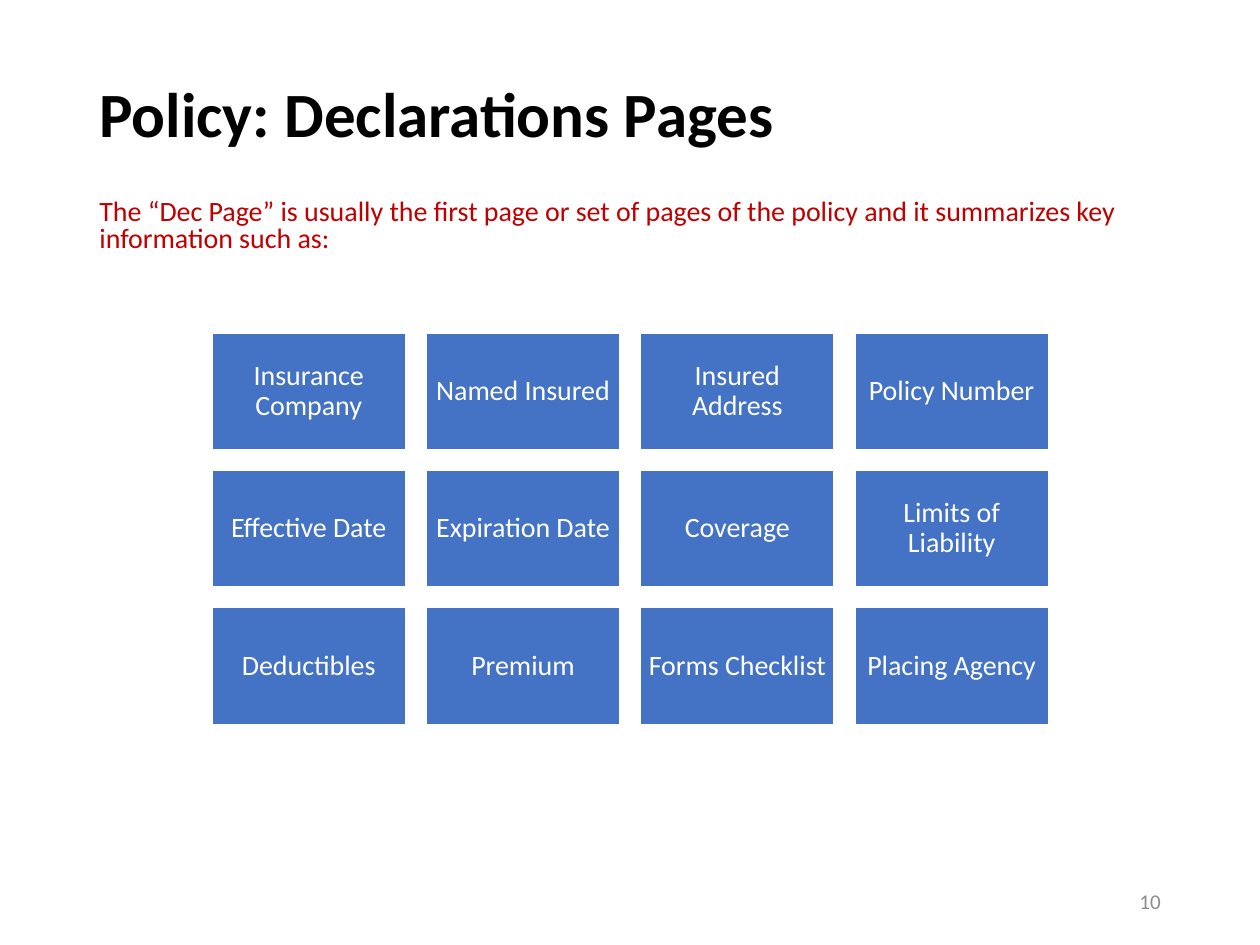
from pptx import Presentation
from pptx.dml.color import RGBColor
from pptx.enum.shapes import MSO_SHAPE
from pptx.enum.text import MSO_ANCHOR, MSO_AUTO_SIZE, PP_ALIGN
from pptx.oxml.ns import qn
from pptx.util import Cm, Pt
from lxml.etree import SubElement

TITLE = "Policy: Declarations Pages"
INTRO = (
    "The “Dec Page” is usually the first page or set of pages of the policy "
    "and it summarizes key information such as:"
)
PAGE_NUMBER = "10"
DECLARATIONS = [
    ["Insurance Company", "Named Insured", "Insured Address", "Policy Number"],
    ["Effective Date", "Expiration Date", "Coverage", "Limits of Liability"],
    ["Deductibles", "Premium", "Forms Checklist", "Placing Agency"],
]
COLOURS = {
    "title": "000000",
    "intro": "C00000",
    "number": "8C8C8C",
    "card": "4472C4",
    "white": "FFFFFF",
}
GRID_LEFT, GRID_TOP = 4.27, 6.71
CARD_WIDTH, CARD_HEIGHT, GAP = 3.91, 2.36, 0.41
CARD_INSET = Cm(0.15)


def colour(name):
    return RGBColor.from_string(COLOURS[name])


def place(part, left, top, width, height):
    part.left, part.top = Cm(left), Cm(top)
    part.width, part.height = Cm(width), Cm(height)


def write(part, text, size, colour_name, align, anchor, spacing=1.0, bold=False):
    frame = part.text_frame
    frame.text = text
    frame.word_wrap = True
    frame.auto_size = MSO_AUTO_SIZE.NONE
    frame.vertical_anchor = anchor
    paragraph = frame.paragraphs[0]
    paragraph.alignment = align
    paragraph.line_spacing = spacing
    paragraph.space_before = Pt(0)
    font = paragraph.runs[0].font
    font.name, font.size, font.bold = "Calibri", Pt(size), bold
    font.color.rgb = colour(colour_name)
    return paragraph


def add_card(slide, label, row, column):
    card = slide.shapes.add_shape(
        MSO_SHAPE.RECTANGLE,
        Cm(GRID_LEFT + column * (CARD_WIDTH + GAP)),
        Cm(GRID_TOP + row * (CARD_HEIGHT + GAP)),
        Cm(CARD_WIDTH),
        Cm(CARD_HEIGHT),
    )
    card.shadow.inherit = False
    card.fill.solid()
    card.fill.fore_color.rgb = colour("card")
    card.line.color.rgb = colour("white")
    card.line.width = Pt(1)
    frame = card.text_frame
    frame.margin_left = frame.margin_right = CARD_INSET
    frame.margin_top = frame.margin_bottom = CARD_INSET
    write(card, label, 16, "white", PP_ALIGN.CENTER, MSO_ANCHOR.MIDDLE, 0.9)


def main():
    deck = Presentation()
    deck.slide_width, deck.slide_height = Cm(25.4), Cm(19.05)
    slide = deck.slides.add_slide(deck.slide_layouts[1])

    title = slide.shapes.title
    place(title, 1.75, 1.02, 21.9, 2.67)
    write(title, TITLE, 36, "title", PP_ALIGN.LEFT, MSO_ANCHOR.MIDDLE, 0.9, True)

    intro = slide.placeholders[1]
    place(intro, 1.75, 3.91, 21.03, 1.37)
    paragraph = write(intro, INTRO, 16, "intro", PP_ALIGN.LEFT, MSO_ANCHOR.TOP, 0.8)
    properties = paragraph._p.get_or_add_pPr()
    properties.set("marL", "0")
    properties.set("indent", "0")
    SubElement(properties, qn("a:buNone"))

    number = slide.shapes.add_textbox(Cm(17.93), Cm(17.65), Cm(5.72), Cm(1.02))
    write(number, PAGE_NUMBER, 12, "number", PP_ALIGN.RIGHT, MSO_ANCHOR.MIDDLE)

    for row, labels in enumerate(DECLARATIONS):
        for column, label in enumerate(labels):
            add_card(slide, label, row, column)

    deck.save("out.pptx")


if __name__ == "__main__":
    main()
